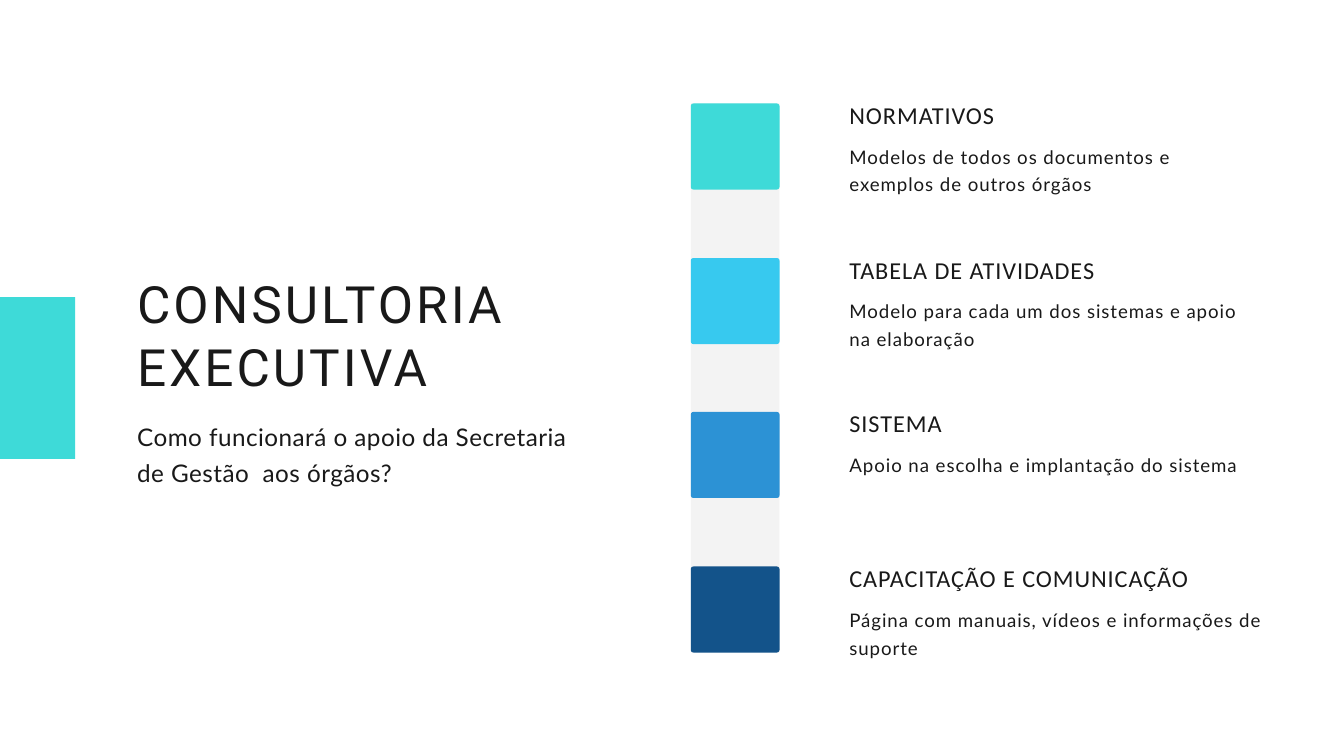
from lxml import etree
from pptx import Presentation, util as u
from pptx.dml.color import RGBColor
from pptx.enum import shapes, text
from pptx.oxml.ns import qn

PX = 9144
INK = "191919"
TEAL = "3EDAD8"


def px(n):
    return u.Emu(n * PX)


def rgb(code):
    return RGBColor.from_string(code)


class Deck:
    def __init__(self, wide, high):
        self.prs = Presentation()
        self.prs.slide_width = px(wide)
        self.prs.slide_height = px(high)
        self.page = self.prs.slides.add_slide(self.prs.slide_layouts[6])

    def box(self, x, y, w, h, fill, round_by=0, alpha=100):
        kind = shapes.MSO_SHAPE.RECTANGLE
        if round_by:
            kind = shapes.MSO_SHAPE.ROUNDED_RECTANGLE
        shape = self.page.shapes.add_shape(kind, px(x), px(y), px(w), px(h))
        if round_by:
            shape.adjustments[0] = round_by
        shape.shadow.inherit = False
        shape.line.fill.background()
        shape.fill.solid()
        shape.fill.fore_color.rgb = rgb(fill)
        if alpha < 100:
            tint = shape.element.spPr.find(qn("a:solidFill"))[0]
            etree.SubElement(tint, qn("a:alpha"), val=str(alpha * 1000))

    def label(self, x, y, w, h, words, font, size, lead, gap):
        frame = self.page.shapes.add_textbox(px(x), px(y), px(w), px(h)).text_frame
        frame.margin_left = frame.margin_right = 0
        frame.margin_top = frame.margin_bottom = 0
        frame.word_wrap = True
        frame.auto_size = text.MSO_AUTO_SIZE.SHAPE_TO_FIT_TEXT
        para = frame.paragraphs[0]
        para.line_spacing = u.Pt(lead)
        run = para.add_run()
        run.text = words
        run.font.name = font
        run.font.size = u.Pt(size)
        run.font.color.rgb = rgb(INK)
        run.font._element.set("spc", str(round(gap * 100)))

    def save(self):
        self.prs.save("out.pptx")


def main():
    deck = Deck(2000, 1125)
    deck.box(0, 442, 112, 241, TEAL)
    deck.label(204, 402, 652, 187, "CONSULTORIA EXECUTIVA", "Roboto", 55, 67.7, 3.3)
    deck.label(204, 617, 652, 105,
               "Como funcionará o apoio da Secretaria de Gestão  aos órgãos?",
               "Lato", 26, 39, 0.5)

    steps = [
        (TEAL, 582, "NORMATIVOS",
         "Modelos de todos os documentos e exemplos de outros órgãos"),
        ("37C9EF", 582, "TABELA DE ATIVIDADES",
         "Modelo para cada um dos sistemas e apoio na elaboração"),
        ("2C92D5", 582, "SISTEMA",
         "Apoio na escolha e implantação do sistema"),
        ("13538A", 624, "CAPACITAÇÃO E COMUNICAÇÃO",
         "Página com manuais, vídeos e informações de suporte"),
    ]
    deck.box(1028, 154, 132, 817, INK, alpha=5)
    for i, (fill, wide, head, body) in enumerate(steps):
        top = 154 + round(i * 229.6)
        deck.box(1028, top, 132, 128, fill, round_by=0.03)
        deck.label(1264, top - 8, wide, 45, head, "Calibri", 26, 33.5, 1)
        deck.label(1264, top + 54, wide, 80, body, "Lato", 20, 30, 1)
    deck.save()


if __name__ == "__main__":
    main()
